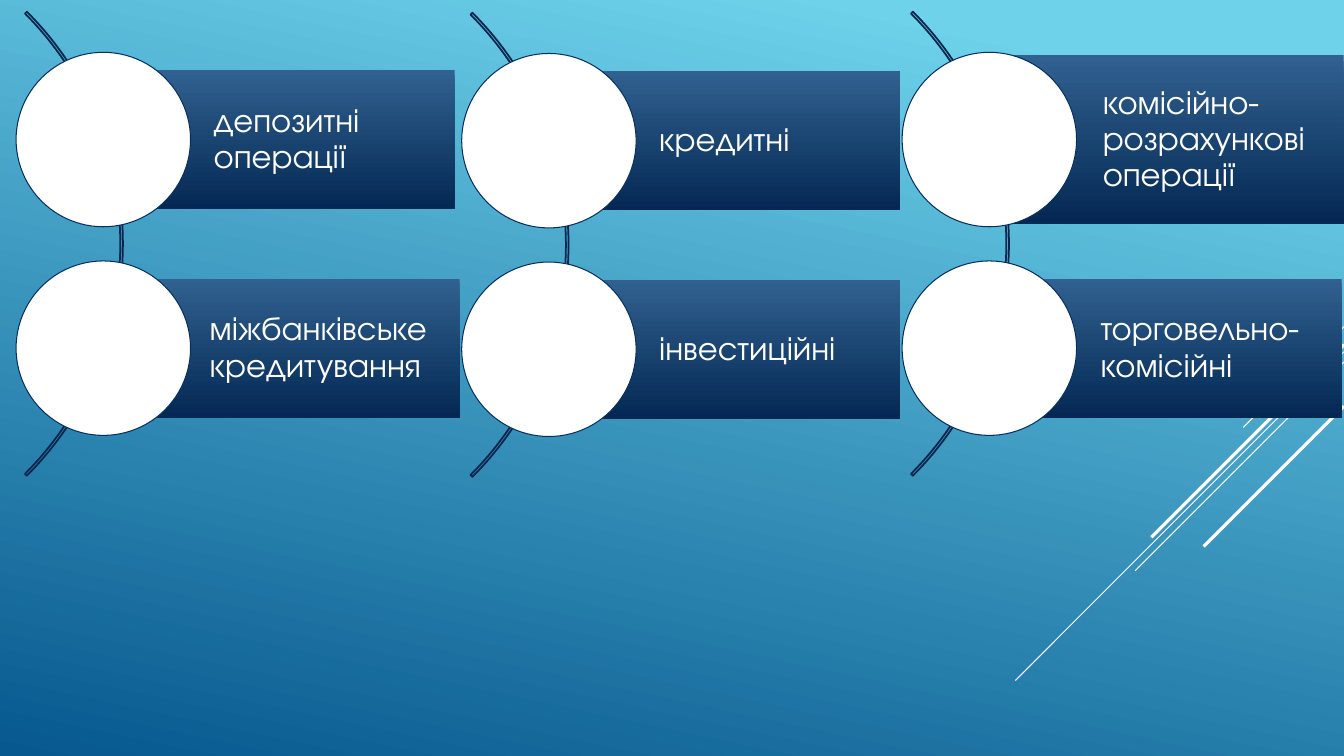
from lxml import etree
from pptx import Presentation
from pptx.dml.color import RGBColor
from pptx.enum.shapes import MSO_CONNECTOR, MSO_SHAPE
from pptx.enum.text import MSO_ANCHOR, PP_ALIGN
from pptx.oxml.ns import qn
from pptx.util import Pt

ARC, CIRCLE, RECTANGLE = MSO_SHAPE.BLOCK_ARC, MSO_SHAPE.OVAL, MSO_SHAPE.RECTANGLE
STRAIGHT = MSO_CONNECTOR.STRAIGHT
MIDDLE, LEFT = MSO_ANCHOR.MIDDLE, PP_ALIGN.LEFT

FONT = "TeX Gyre Adventor"
COLORS = {
    "white": "FFFFFF", "sky": "6ED2EB", "sea": "06588E",
    "bar top": "316190", "bar bottom": "042853",
    "arc": "04264E", "ring": "052F61",
}
WIDTH, HEIGHT = 960, 540
ARC_SIZE, CIRCLE_SIZE, ROW_PITCH = 468.7, 124.6, 149
ARC_LEFT, ARC_TOP = -392.4, -97.7  # relative to the first circle of a column


def color(name):
    return RGBColor.from_string(COLORS[name])


def paint_gradient(fill, first, last, angle, start=0):
    fill.gradient()
    fill.gradient_angle = angle
    for stop, name, position in zip(fill.gradient_stops, (first, last), (start, 1)):
        stop.color.rgb = color(name)
        stop.position = position


deck = Presentation()
deck.slide_width, deck.slide_height = Pt(WIDTH), Pt(HEIGHT)
page = deck.slides.add_slide(deck.slide_layouts[6])
paint_gradient(page.background.fill, "sky", "sea", 258, 0.1)

# Diagonal streaks at 45 degrees from the right edge: start height, run, weight
streaks = [
    (233.3, 72, 0.75), (251.3, 234.7, 0.75), (258.5, 149.2, 0.75),
    (246.2, 137.6, 2.25), (290.2, 100.2, 2.25),
]
for top, run, weight in streaks:
    streak = page.shapes.add_connector(
        STRAIGHT, Pt(WIDTH), Pt(top), Pt(WIDTH - run), Pt(top + run))
    streak.line.color.rgb = color("white")
    streak.line.width = Pt(weight)
    etree.SubElement(streak._element.spPr, qn("a:effectLst"))

# Columns: circle left, circle top, bars as (text, left, width, height)
columns = [
    (11.5, 37.4, [("депозитні операції", 73.4, 251.3, 99.4),
                  ("міжбанківське кредитування", 70.6, 257.8, 99.4)]),
    (329.8, 38.2, [("кредитні", 391.7, 251.3, 99.4),
                   ("інвестиційні", 391.7, 251.3, 99.4)]),
    (644.4, 37.4, [("комісійно-розрахункові операції", 708.5, 251.3, 120.2),
                   ("торговельно-комісійні", 707, 251.3, 99.4)]),
]
for circle_left, first_top, bars in columns:
    # Arc behind the circles
    arc = page.shapes.add_shape(
        ARC, Pt(circle_left + ARC_LEFT), Pt(first_top + ARC_TOP),
        Pt(ARC_SIZE), Pt(ARC_SIZE))
    for index, value in enumerate((189, 27, 0.004)):
        arc.adjustments[index] = value
    arc.shadow.inherit = False
    arc.fill.background()
    arc.line.color.rgb = color("arc")
    arc.line.width = Pt(1.25)

    for row, (text, left, width, height) in enumerate(bars):
        circle_top = first_top + row * ROW_PITCH

        # Bar with its label, centred on the circle
        bar_top = circle_top + (CIRCLE_SIZE - height) / 2
        bar = page.shapes.add_shape(
            RECTANGLE, Pt(left), Pt(bar_top), Pt(width), Pt(height))
        bar.shadow.inherit = False
        paint_gradient(bar.fill, "bar top", "bar bottom", 270)
        bar.line.fill.background()
        frame = bar.text_frame
        frame.word_wrap = True
        frame.vertical_anchor = MIDDLE
        frame.margin_left = Pt(79.2)
        frame.margin_top = frame.margin_right = frame.margin_bottom = Pt(5)
        para = frame.paragraphs[0]
        para.text = text
        para.alignment = LEFT
        para.line_spacing = 0.9
        para.font.name = FONT
        para.font.size = Pt(24)
        para.font.color.rgb = color("white")

        # White circle
        circle = page.shapes.add_shape(
            CIRCLE, Pt(circle_left), Pt(circle_top), Pt(CIRCLE_SIZE), Pt(CIRCLE_SIZE))
        circle.shadow.inherit = False
        circle.fill.solid()
        circle.fill.fore_color.rgb = color("white")
        circle.line.color.rgb = color("ring")
        circle.line.width = Pt(0.75)

deck.save("out.pptx")
